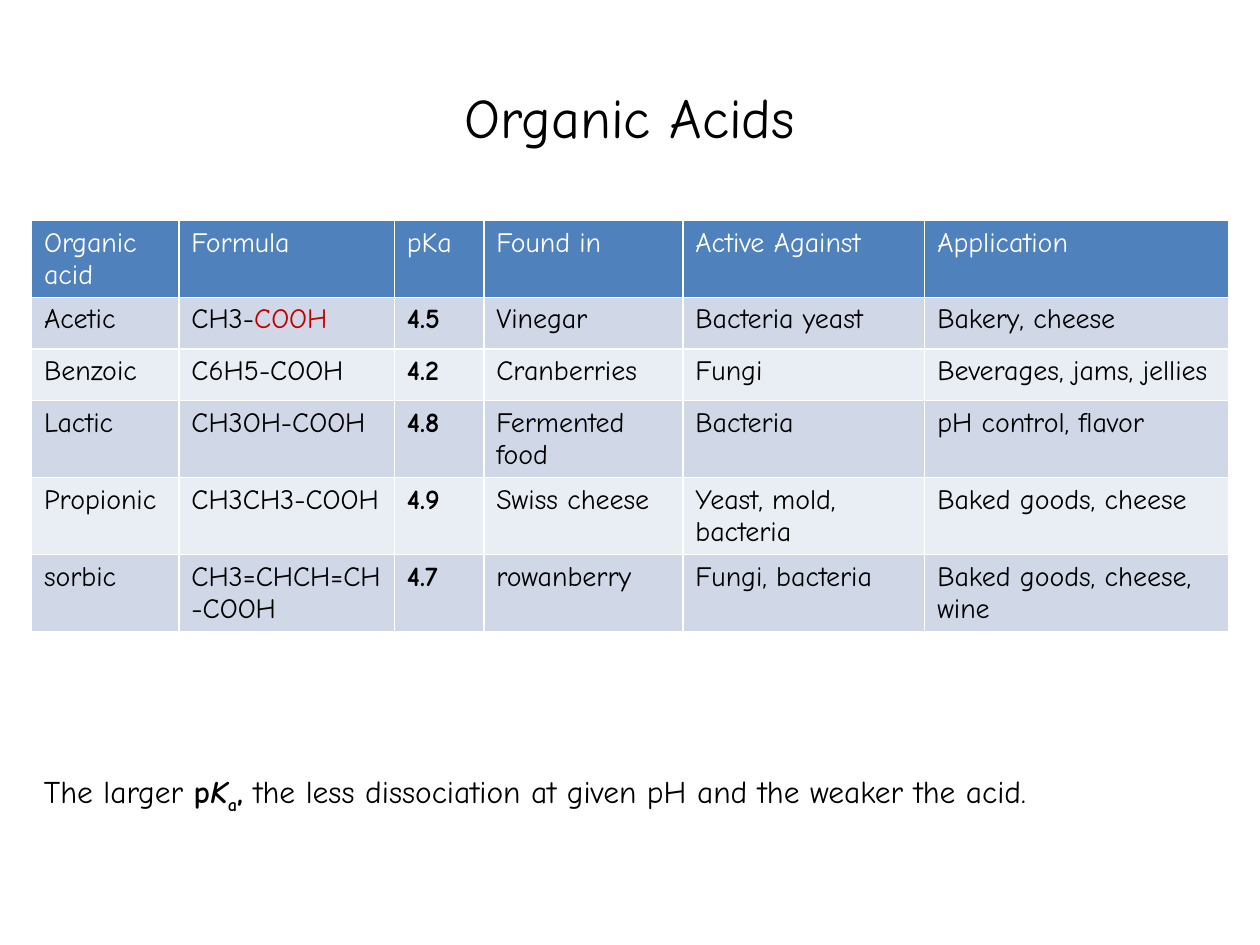
from pptx import Presentation
from pptx.dml.color import RGBColor
from pptx.enum.text import MSO_ANCHOR, PP_ALIGN
from pptx.util import Inches, Pt

FONT = "Comic Neue"
COLORS = {
    "text": "000000",
    "header_text": "FFFFFF",
    "header": "4F81BD",
    "odd_row": "D0D8E8",
    "even_row": "E9EDF4",
    "carboxyl": "C00000",
}
COLUMN_WIDTHS = [1.17, 1.71, 0.71, 1.58, 1.92, 2.41]
ROW_HEIGHT = 0.41
PKA_COLUMN = 2
ACIDS = [
    ["Organic acid", "Formula", "pKa", "Found in", "Active Against", "Application"],
    ["Acetic", "CH3-", "4.5", "Vinegar", "Bacteria yeast", "Bakery, cheese"],
    ["Benzoic", "C6H5-COOH", "4.2", "Cranberries", "Fungi", "Beverages, jams, jellies"],
    ["Lactic", "CH3OH-COOH", "4.8", "Fermented food", "Bacteria", "pH control, flavor"],
    ["Propionic", "CH3CH3-COOH", "4.9", "Swiss cheese", "Yeast, mold, bacteria",
     "Baked goods, cheese"],
    ["sorbic", "CH3=CHCH=CH-COOH", "4.7", "rowanberry", "Fungi, bacteria",
     "Baked goods, cheese, wine"],
]


def color(name):
    return RGBColor.from_string(COLORS[name])


def style_font(font, size, color_name="text", bold=False):
    font.name = FONT
    font.size = Pt(size)
    font.bold = bold
    font.color.rgb = color(color_name)


def add_run(paragraph, text, size, color_name="text", bold=False):
    run = paragraph.add_run()
    run.text = text
    style_font(run.font, size, color_name, bold)
    return run


def add_text_box(slide, left, top, width, height):
    """Add a wrapping text box and return its text frame."""
    frame = slide.shapes.add_textbox(
        Inches(left), Inches(top), Inches(width), Inches(height)).text_frame
    frame.word_wrap = True
    return frame


def add_title(slide, text):
    frame = add_text_box(slide, 0.5, 0.3, 9, 1.25)
    frame.vertical_anchor = MSO_ANCHOR.MIDDLE
    paragraph = frame.paragraphs[0]
    paragraph.alignment = PP_ALIGN.CENTER
    add_run(paragraph, text, 32)


def add_acid_table(slide):
    table = slide.shapes.add_table(
        len(ACIDS), len(COLUMN_WIDTHS), Inches(0.25), Inches(1.75),
        Inches(sum(COLUMN_WIDTHS)), Inches(ROW_HEIGHT * len(ACIDS))).table
    for column, width in zip(table.columns, COLUMN_WIDTHS):
        column.width = Inches(width)
    for row_index, texts in enumerate(ACIDS):
        is_header = row_index == 0
        table.rows[row_index].height = Inches(ROW_HEIGHT)
        band = "header" if is_header else "odd_row" if row_index % 2 else "even_row"
        for column_index, text in enumerate(texts):
            cell = table.cell(row_index, column_index)
            cell.fill.solid()
            cell.fill.fore_color.rgb = color(band)
            add_run(cell.text_frame.paragraphs[0], text, 16,
                    "header_text" if is_header else "text",
                    bold=column_index == PKA_COLUMN and not is_header)
    acetic_formula = table.cell(1, 1).text_frame.paragraphs[0]
    add_run(acetic_formula, "COOH", 16, "carboxyl")


def add_conclusion(slide):
    paragraph = add_text_box(slide, 0.25, 6.08, 9.5, 0.4).paragraphs[0]
    add_run(paragraph, "The larger ", 18)
    add_run(paragraph, "p", 18, bold=True)
    add_run(paragraph, "K", 18, bold=True).font.italic = True
    subscript = add_run(paragraph, "a", 18, bold=True)
    subscript.font._element.set("baseline", "-25000")
    add_run(paragraph, ",", 18, bold=True)
    add_run(paragraph, " the less dissociation at given pH and the weaker the acid.", 18)


def main():
    presentation = Presentation()
    presentation.slide_width = Inches(10)
    presentation.slide_height = Inches(7.5)
    slide = presentation.slides.add_slide(presentation.slide_layouts[6])
    add_acid_table(slide)
    add_title(slide, "Organic Acids")
    add_conclusion(slide)
    presentation.save("out.pptx")


if __name__ == "__main__":
    main()
